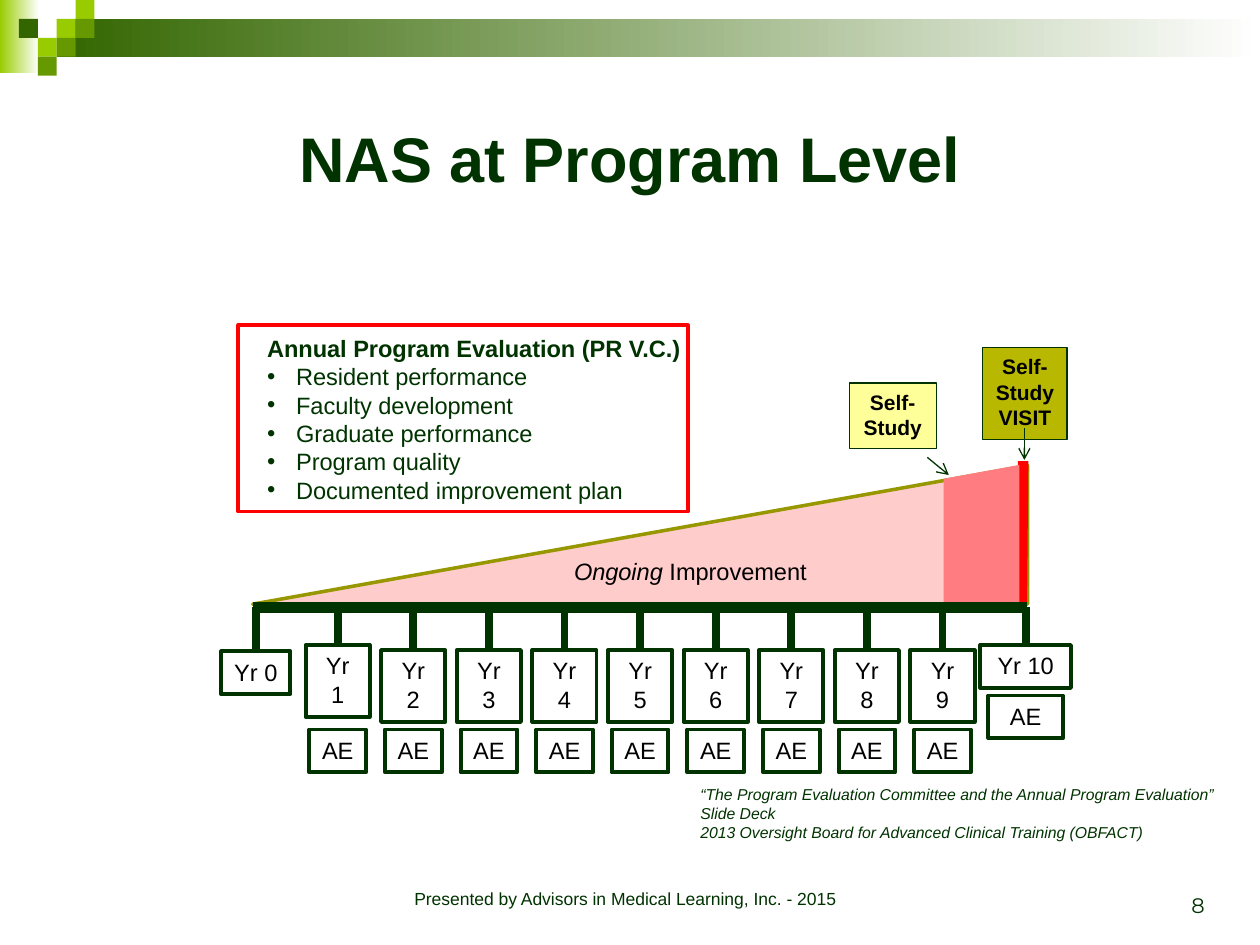
from dataclasses import dataclass

from lxml.etree import SubElement
from pptx import Presentation
from pptx.dml.color import RGBColor
from pptx.enum.shapes import MSO_CONNECTOR, MSO_SHAPE
from pptx.enum.text import MSO_ANCHOR, MSO_AUTO_SIZE, PP_ALIGN
from pptx.oxml.ns import qn
from pptx.util import Inches, Pt


@dataclass(frozen=True)
class Theme:
    font: str = "Arial"
    number_font: str = "Montserrat"
    ink: str = "003300"
    black: str = "000000"
    white: str = "FFFFFF"
    lime: str = "99CC00"
    leaf: str = "669900"
    forest: str = "336600"
    olive: str = "979700"
    visit: str = "B8B800"
    study: str = "FFFF99"
    red: str = "FF0000"
    rose: str = "FF7C80"
    blush: str = "FFCCCC"
    title: float = 36
    body: float = 13.5
    label: float = 12
    footer: float = 10
    source: float = 9


THEME = Theme()
COLUMNS, ROWS = 100, 75
YEAR_PITCH = 6
AXIS_ROW = 48.2


def grid(count):
    return Inches(count / 10)


def color(value):
    return RGBColor.from_string(value)


def move(shape, box):
    shape.left, shape.top, shape.width, shape.height = map(grid, box)


def add_run(paragraph, text, size, ink=THEME.ink, font=THEME.font, bold=False, italic=False):
    run = paragraph.add_run()
    run.text = text
    run.font.name, run.font.size = font, Pt(size)
    run.font.bold, run.font.italic = bold, italic
    run.font.color.rgb = color(ink)


def write_lines(shape, lines, size, align=PP_ALIGN.CENTER, anchor=MSO_ANCHOR.TOP, wrap=True, **style):
    frame = shape.text_frame
    frame.word_wrap = wrap
    frame.auto_size = MSO_AUTO_SIZE.NONE
    frame.vertical_anchor = anchor
    for index, line in enumerate(lines):
        paragraph = frame.add_paragraph() if index else frame.paragraphs[0]
        paragraph.alignment = align
        paragraph.space_before = Pt(0)
        add_run(paragraph, line, size, **style)


def add_text(slide, box, lines, size, **style):
    text_box = slide.shapes.add_textbox(*map(grid, box))
    write_lines(text_box, lines, size, **style)


def add_block(slide, box, fill=None, line=None, weight=0.75, kind=MSO_SHAPE.RECTANGLE):
    shape = slide.shapes.add_shape(kind, *map(grid, box))
    shape.shadow.inherit = False
    if fill:
        shape.fill.solid()
        shape.fill.fore_color.rgb = color(fill)
    else:
        shape.fill.background()
    if line:
        shape.line.color.rgb = color(line)
        shape.line.width = Pt(weight)
    else:
        shape.line.fill.background()
    return shape


def add_fade(slide, box, start):
    shape = add_block(slide, box)
    shape.fill.gradient()
    shape.fill.gradient_angle = 0
    for stop, value in zip(shape.fill.gradient_stops, (start, THEME.white)):
        stop.color.rgb = color(value)


def add_line(slide, start, end, weight, line=THEME.ink, arrow=False, target=None):
    connector = slide.shapes.add_connector(MSO_CONNECTOR.STRAIGHT, *map(grid, start + end))
    connector.line.color.rgb = color(line)
    connector.line.width = Pt(weight)
    if arrow:
        SubElement(connector.line._get_or_add_ln(), qn("a:tailEnd"), type="arrow")
    SubElement(connector._element.spPr, qn("a:effectLst"))
    if target is not None:
        connector.end_connect(target, 0)


def add_label(slide, center, top, width, height, text, wrap=True):
    box = add_block(slide, (center - width / 2, top, width, height), line=THEME.ink, weight=2.25)
    write_lines(box, [text], THEME.body, wrap=wrap, ink=THEME.black)
    return box


def add_banner(slide):
    add_fade(slide, (0, 0, 3.1, 5.8), THEME.lime)
    add_fade(slide, (4.5, 1.5, COLUMNS - 4.5, 3), THEME.forest)
    tiles = [(3, 1, THEME.lime), (4, 0, THEME.lime), (4, 1, THEME.leaf), (2, 2, THEME.lime),
             (1, 1, THEME.forest), (3, 2, THEME.leaf), (2, 3, THEME.leaf)]
    for column, row, fill in tiles:
        add_block(slide, (column * 1.5, row * 1.5, 1.5, 1.5), fill)


def add_title(slide, text):
    title = slide.shapes.title
    move(title, (5, 5, COLUMNS - 10, 15))
    write_lines(title, [text], THEME.title, anchor=MSO_ANCHOR.MIDDLE, bold=True)


def add_evaluation_list(slide, heading, items):
    body = slide.placeholders[1]
    move(body, (20.2, 26, 35.3, 15.1))
    write_lines(body, [heading, *items], THEME.body, align=PP_ALIGN.LEFT, wrap=False)
    first, *rest = body.text_frame.paragraphs
    first.runs[0].font.bold = True
    properties = first._p.get_or_add_pPr()
    properties.set("marL", "0")
    properties.set("indent", "0")
    SubElement(properties, qn("a:buNone"))
    for paragraph in rest:
        properties = paragraph._p.get_or_add_pPr()
        properties.set("marL", str(grid(2.3)))
        properties.set("indent", str(-grid(2.3)))
        SubElement(properties, qn("a:buFont"), typeface=THEME.font)
        SubElement(properties, qn("a:buChar"), char="•")
    add_block(slide, (18.9, 25.8, 35.7, 14.8), line=THEME.red, weight=2)


def add_improvement_wedge(slide):
    wedge = add_block(slide, (45.3, 11.7, 11, 61.5), THEME.blush, THEME.olive, 2, MSO_SHAPE.RIGHT_TRIANGLE)
    wedge.rotation = 270
    add_line(slide, (81.2, 36.6), (81.1, 47.9), 6, THEME.red)
    add_block(slide, (74.9, 38, 6, 9.9), THEME.rose)
    slope = add_block(slide, (74.9, 36.9, 6, 1.1), THEME.rose, kind=MSO_SHAPE.ISOSCELES_TRIANGLE)
    slope.adjustments[0] = 1
    caption = slide.shapes.add_textbox(*map(grid, (38, 43.7, 33.6, 3.4)))
    write_lines(caption, ["Ongoing"], THEME.body, ink=THEME.black, italic=True)
    add_run(caption.text_frame.paragraphs[0], " Improvement", THEME.body, THEME.black)


def add_callout(slide, box, fill, lines, start, end, wrap):
    callout = add_block(slide, box, fill, THEME.ink)
    write_lines(callout, lines, THEME.label, wrap=wrap, ink=THEME.black, bold=True)
    add_line(slide, start, end, 0.75, arrow=True)


def add_timeline(slide):
    add_line(slide, (20.1, AXIS_ROW), (81.5, AXIS_ROW), 6)
    stops = [(20.3, 51.7, 5.5, 3.4)]
    stops += [(20.8 + YEAR_PITCH * year, 51.2 if year == 1 else 51.6, 5.1, 5.7) for year in range(1, 10)]
    stops += [(81.4, 51.2, 7.2, 3.4)]
    for year, (center, top, width, height) in enumerate(stops):
        box = add_label(slide, center, top, width, height, f"Yr {year}", wrap=year > 0)
        add_line(slide, (center, AXIS_ROW), (center, top), 4.5, target=box)
        if year == 10:
            add_label(slide, center, 55.2, 5.9, 3.4, "AE")
        elif year:
            add_label(slide, center, 57.9, 4.5, 3.4, "AE", wrap=False)


def main():
    presentation = Presentation()
    presentation.slide_width, presentation.slide_height = grid(COLUMNS), grid(ROWS)
    slide = presentation.slides.add_slide(presentation.slide_layouts[1])
    add_banner(slide)
    add_title(slide, "NAS at Program Level")
    add_improvement_wedge(slide)
    add_callout(slide, (78, 27.6, 6.7, 7.3), THEME.visit, ["Self-", "Study", "VISIT"],
                (81.3, 34), (81.3, 36.5), False)
    add_callout(slide, (67.4, 30.4, 6.9, 5.2), THEME.study, ["Self-", "Study"],
                (73.6, 36.3), (75.3, 37.7), True)
    add_timeline(slide)
    add_evaluation_list(slide, "Annual Program Evaluation (PR V.C.)", [
        "Resident performance", "Faculty development", "Graduate performance",
        "Program quality", "Documented improvement plan"])
    add_text(slide, (54.6, 61.8, 45.4, 5.6), [
        "“The Program Evaluation Committee and the Annual Program Evaluation” Slide Deck",
        "2013 Oversight Board for Advanced Clinical Training (OBFACT)"],
        THEME.source, align=PP_ALIGN.LEFT, italic=True)
    add_text(slide, (27.5, 70, 44.2, 3.3),
             ["Presented by Advisors in Medical Learning, Inc. - 2015"], THEME.footer)
    add_text(slide, (73.3, 68.3, 23.3, 5), ["8"], THEME.label, align=PP_ALIGN.RIGHT,
             anchor=MSO_ANCHOR.BOTTOM, font=THEME.number_font)
    presentation.save("out.pptx")


if __name__ == "__main__":
    main()
